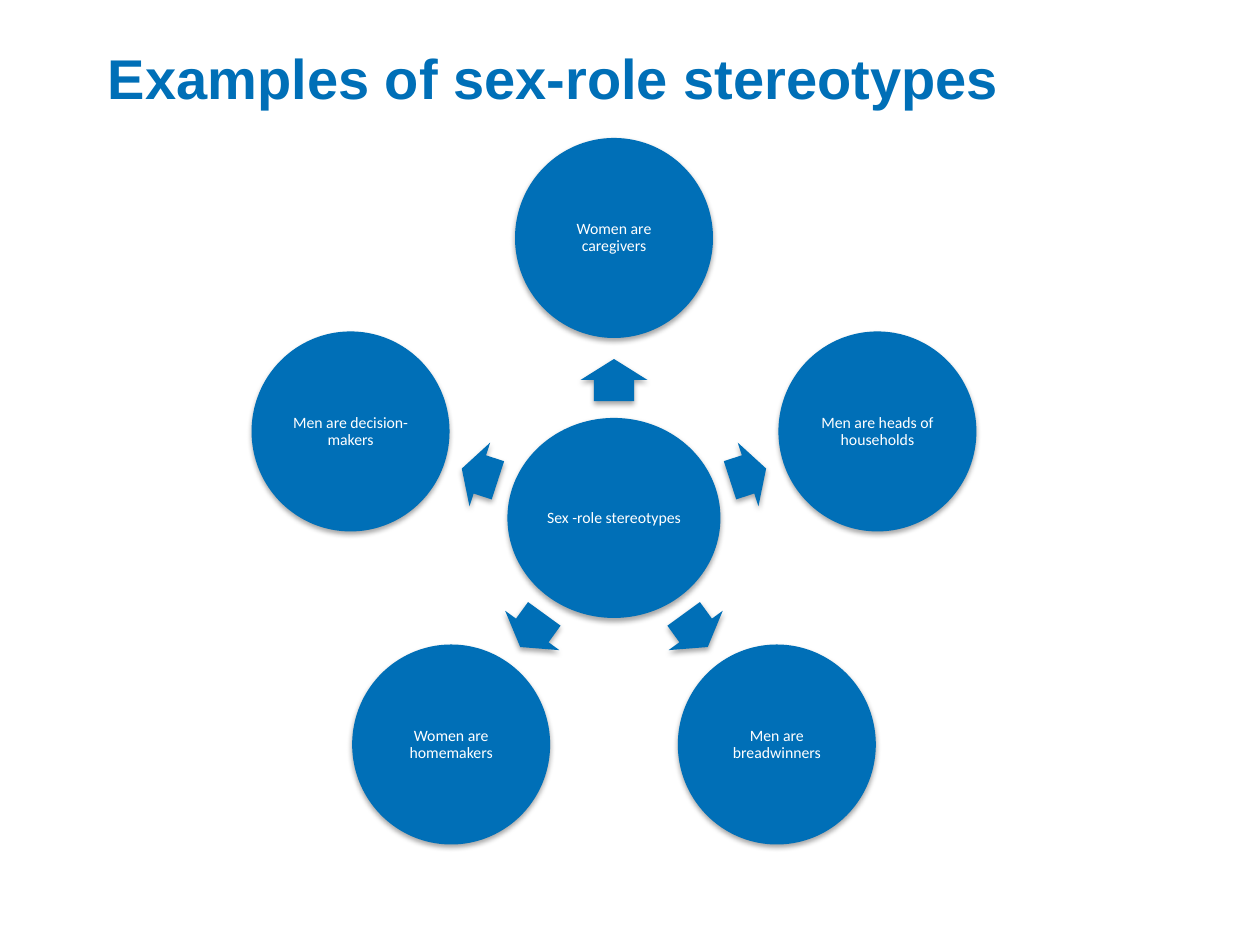
from dataclasses import dataclass
from math import cos, radians, sin

from lxml.etree import SubElement
from pptx import Presentation
from pptx.dml.color import RGBColor
from pptx.enum.shapes import MSO_SHAPE
from pptx.enum.text import MSO_ANCHOR, PP_ALIGN
from pptx.oxml.ns import qn
from pptx.util import Emu, Pt

PX = 914400 // 126
BLUE = RGBColor(0x00, 0x6F, 0xB7)
WHITE = RGBColor(0xFF, 0xFF, 0xFF)

CENTER_X, CENTER_Y = 614, 518
RING_X, RING_Y = 277, 280
HUB_W, CIRCLE_W, CIRCLE_H = 213, 198, 200
ARROW_W = 67
INSET = 1


@dataclass(frozen=True)
class Spoke:
    text: str
    arrow_len: int
    arrow_reach: int


SPOKES = [
    Spoke("Women are caregivers", 42, 138),
    Spoke("Men are heads of households", 38, 141),
    Spoke("Men are breadwinners", 41, 139),
    Spoke("Women are homemakers", 41, 139),
    Spoke("Men are decision-makers", 38, 141),
]


def px(n: float) -> Emu:
    return Emu(round(n * PX))


def set_margins(tf, n: int) -> None:
    tf.margin_left = tf.margin_right = tf.margin_top = tf.margin_bottom = px(n)


def format_run(p, font: str, size: int, color: RGBColor, bold: bool = False) -> None:
    r = p.runs[0]
    r.font.name = font
    r.font.size = Pt(size)
    r.font.bold = bold
    r.font.color.rgb = color


def add_shadow(sp) -> None:
    sp.shadow.inherit = False
    effects = sp._element.spPr.find(qn("a:effectLst"))
    shadow = SubElement(effects, qn("a:outerShdw"), blurRad=str(Pt(3)),
                        dist=str(Pt(1.8)), dir="5400000", rotWithShape="0")
    color = SubElement(shadow, qn("a:srgbClr"), val="000000")
    SubElement(color, qn("a:alpha"), val="35000")


def add_blue_shape(s, kind: MSO_SHAPE, cx: float, cy: float, w: int, h: int):
    sp = s.shapes.add_shape(kind, px(cx - w / 2), px(cy - h / 2), px(w), px(h))
    sp.fill.solid()
    sp.fill.fore_color.rgb = BLUE
    sp.line.fill.background()
    add_shadow(sp)
    return sp


def add_circle(s, text: str, cx: float, cy: float, w: int) -> None:
    sp = add_blue_shape(s, MSO_SHAPE.OVAL, cx, cy, w, CIRCLE_H)
    tf = sp.text_frame
    tf.word_wrap = True
    tf.vertical_anchor = MSO_ANCHOR.MIDDLE
    set_margins(tf, INSET)
    tf.text = text
    p = tf.paragraphs[0]
    p.alignment = PP_ALIGN.CENTER
    p.line_spacing = 0.9
    format_run(p, "Calibri", 9, WHITE)


def add_arrow(s, spoke: Spoke, angle: float) -> None:
    cx = CENTER_X + spoke.arrow_reach * sin(radians(angle))
    cy = CENTER_Y - spoke.arrow_reach * cos(radians(angle))
    sp = add_blue_shape(s, MSO_SHAPE.UP_ARROW, cx, cy, ARROW_W, spoke.arrow_len)
    sp.adjustments[0] = 0.6
    sp.adjustments[1] = 0.5
    sp.rotation = angle


def add_title(s, text: str) -> None:
    sp = s.shapes.add_textbox(px(102), px(38), px(1042), px(150))
    tf = sp.text_frame
    tf.word_wrap = True
    set_margins(tf, 6)
    tf.text = text
    format_run(tf.paragraphs[0], "Arial", 32, BLUE, bold=True)


def main() -> None:
    prs = Presentation()
    prs.slide_width, prs.slide_height = px(1260), px(945)
    s = prs.slides.add_slide(prs.slide_layouts[6])
    add_title(s, "Examples of sex-role stereotypes")
    add_circle(s, "Sex -role stereotypes", CENTER_X, CENTER_Y, HUB_W)
    for i, spoke in enumerate(SPOKES):
        angle = i * 360 / len(SPOKES)
        add_arrow(s, spoke, angle)
        add_circle(s, spoke.text,
                   CENTER_X + RING_X * sin(radians(angle)),
                   CENTER_Y - RING_Y * cos(radians(angle)), CIRCLE_W)
    prs.save("out.pptx")


if __name__ == "__main__":
    main()
